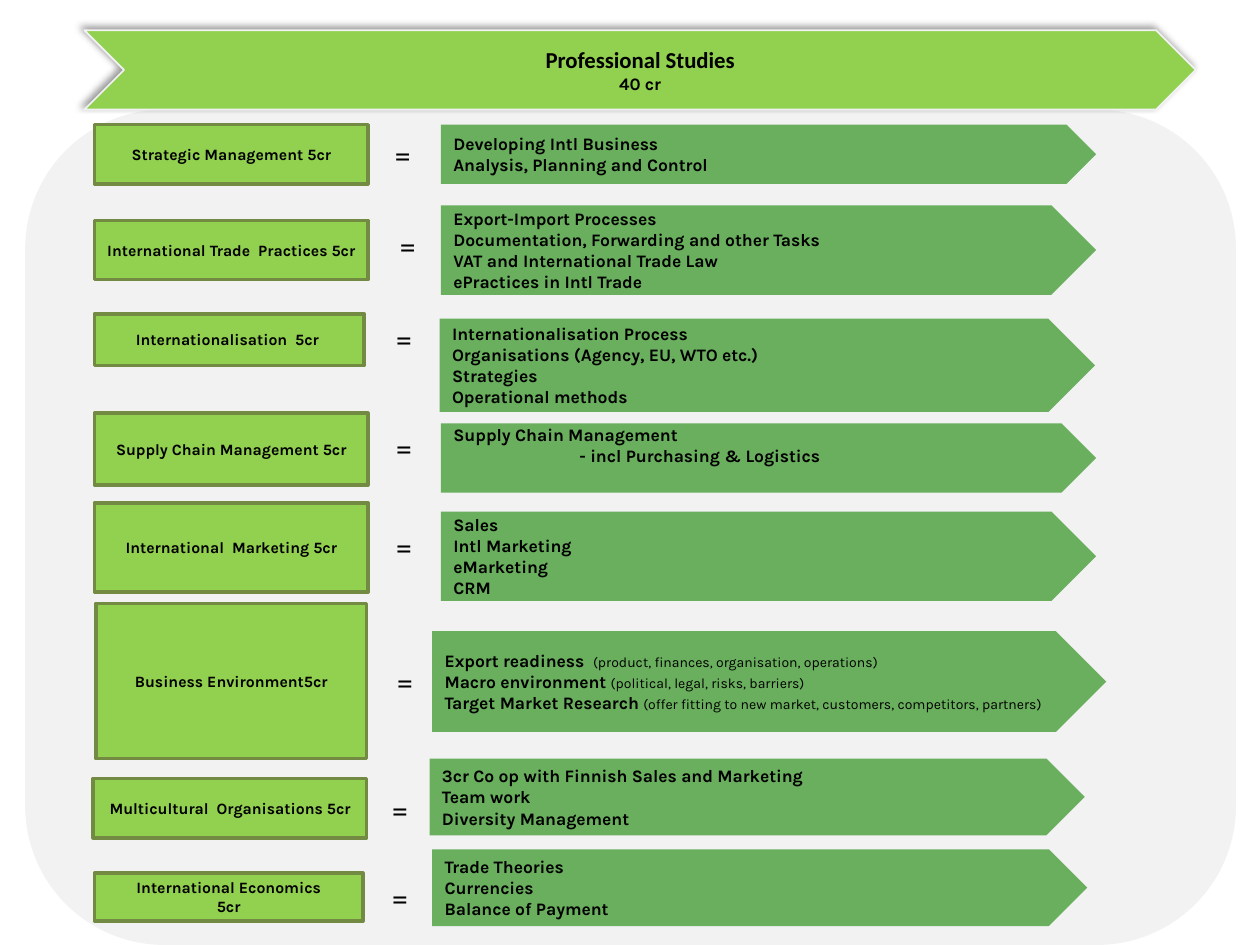
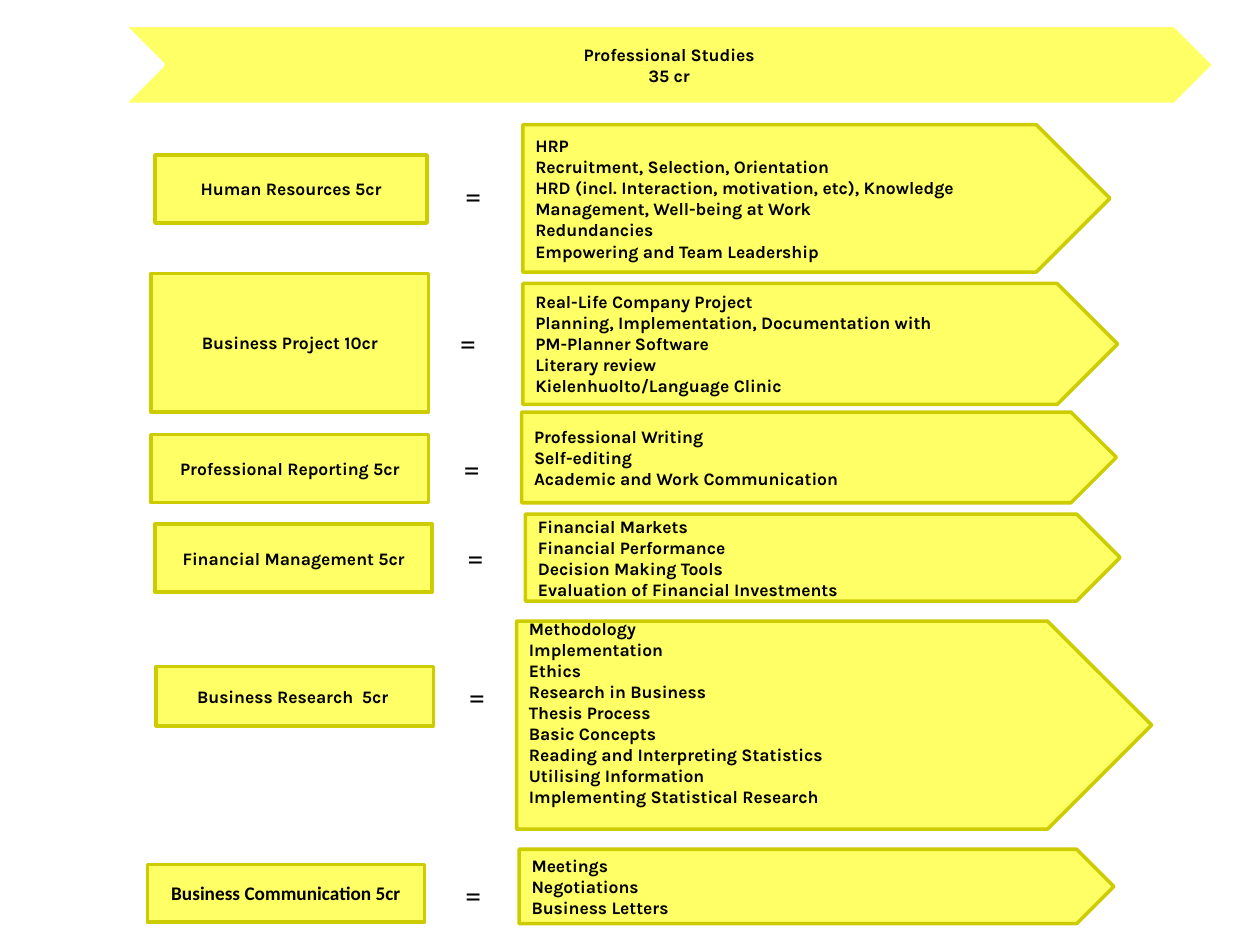
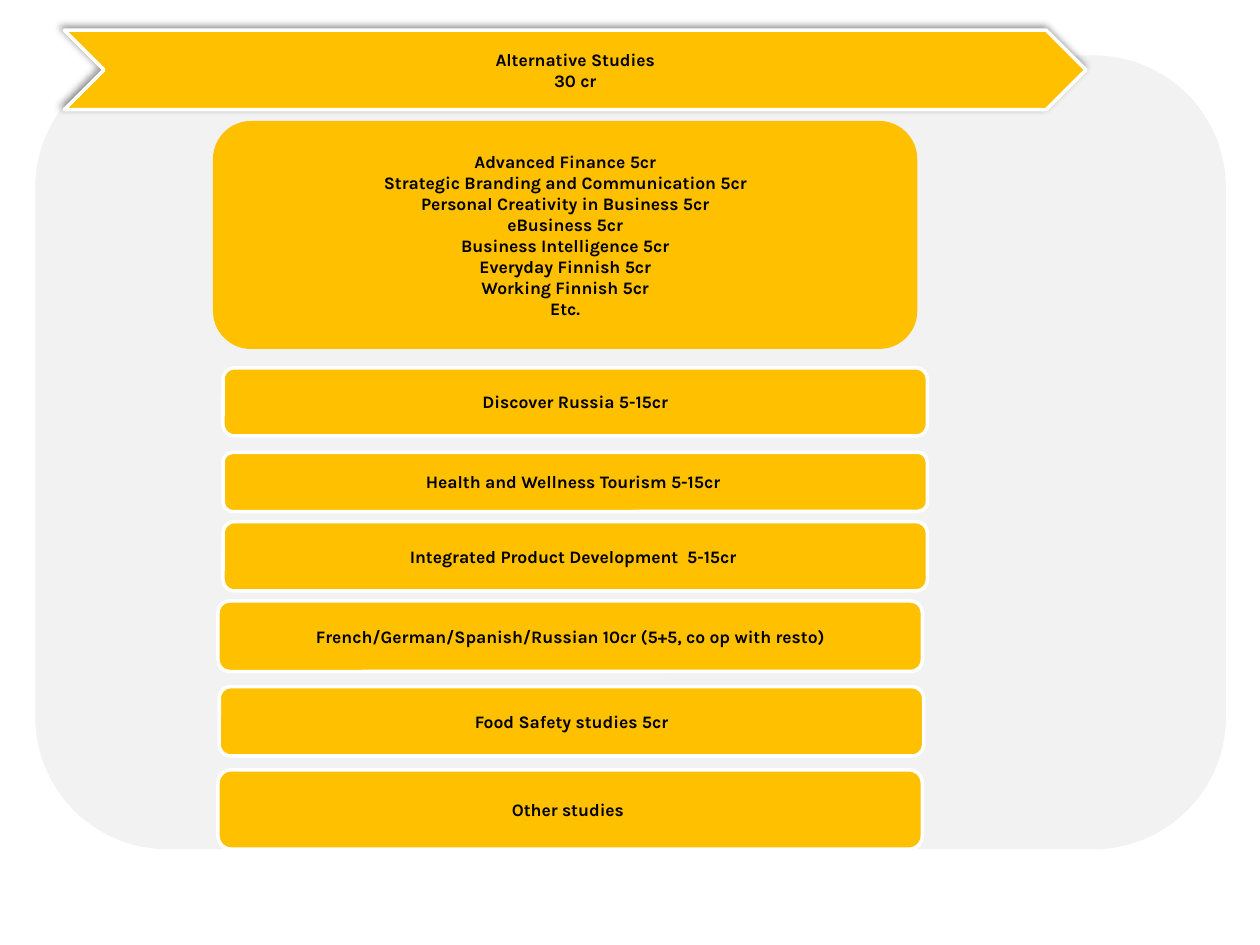
"""Build three slides that list study modules and their contents."""
import pptx
import pptx.dml.color
import pptx.enum.shapes
import pptx.enum.text
import pptx.oxml
import pptx.oxml.ns
import pptx.util

Inches = pptx.util.Inches
Pt = pptx.util.Pt
SHAPE = pptx.enum.shapes.MSO_SHAPE
ALIGN = pptx.enum.text.PP_ALIGN
ANCHOR = pptx.enum.text.MSO_ANCHOR

COLORS = {
    "text": "000000", "white": "FFFFFF", "panel": "F2F2F2",
    "lime": "92D050", "olive": "738A42", "green": "69AF5D",
    "yellow": "FFFF66", "mustard": "CCCC00", "amber": "FFC000",
}
BODY_FONT = "Karla"
SIGN_FONT = "Calibri"
SIGN_HEIGHT = 0.4
EMPTY_LINE = 0.2
QUOTE_INDENT = 1

# Each row: label lines, label box, sign position, arrow box, arrow lines
GREEN_ROWS = [
    (["Strategic Management 5cr"], (0.75, 0.99, 2.17, 0.47), (2.94, 1.03), (3.5, 0.99, 5.2, 0.47),
     ["Developing Intl Business", "Analysis, Planning and Control"]),
    (["International Trade  Practices 5cr"], (0.75, 1.75, 2.17, 0.47), (2.98, 1.75), (3.5, 1.63, 5.2, 0.71),
     ["Export-Import Processes", "Documentation, Forwarding and other Tasks",
      "VAT and International Trade Law", "ePractices in Intl Trade"]),
    (["Internationalisation  5cr "], (0.75, 2.49, 2.14, 0.41), (2.95, 2.49), (3.49, 2.53, 5.2, 0.74),
     ["Internationalisation Process", "Organisations (Agency, EU, WTO etc.)",
      "Strategies", "Operational methods"]),
    (["Supply Chain Management 5cr"], (0.75, 3.28, 2.17, 0.57), (2.95, 3.36), (3.5, 3.36, 5.2, 0.55),
     ["Supply Chain Management", "- incl Purchasing & Logistics"]),
    (["International  Marketing 5cr"], (0.75, 3.99, 2.17, 0.71), (2.95, 4.14), (3.5, 4.06, 5.2, 0.71),
     ["Sales", "Intl Marketing", "eMarketing", "CRM"]),
    (["Business Environment5cr"], (0.76, 4.79, 2.15, 1.23), (2.96, 5.21), (3.43, 5.01, 5.35, 0.8),
     [("Export readiness  ", "(product, finances, organisation, operations)"),
      ("Macro environment ", "(political, legal, risks, barriers)"),
      ("Target Market Research ", "(offer fitting to new market, customers, competitors, partners)")]),
    (["Multicultural  Organisations 5cr"], (0.74, 6.18, 2.17, 0.47), (2.92, 6.23), (3.41, 6.02, 5.2, 0.61),
     ["3cr Co op with Finnish Sales and Marketing", "Team work", "Diversity Management"]),
    (["International Economics", "5cr"], (0.75, 6.93, 2.13, 0.38), (2.92, 6.93), (3.43, 6.74, 5.2, 0.61),
     ["Trade Theories", "Currencies", "Balance of Payment"]),
]
YELLOW_ROWS = [
    (["Human Resources 5cr"], (1.23, 1.23, 2.16, 0.54), (3.44, 1.36), (4.15, 0.99, 4.66, 1.17),
     ["HRP", "Recruitment, Selection, Orientation",
      "HRD (incl. Interaction, motivation, etc), Knowledge Management, Well-being at Work",
      "Redundancies", "Empowering and Team Leadership"]),
    (["Business Project 10cr"], (1.2, 2.17, 2.2, 1.1), (3.4, 2.52), (4.15, 2.25, 4.72, 0.96),
     ["Real-Life Company Project", "Planning, Implementation, Documentation with",
      "PM-Planner Software", "Literary review", "Kielenhuolto/Language Clinic"]),
    (["Professional Reporting 5cr"], (1.2, 3.45, 2.2, 0.54), (3.43, 3.52), (4.14, 3.27, 4.72, 0.72),
     ["Professional Writing", "Self-editing", "Academic and Work Communication"]),
    (["Financial Management 5cr"], (1.23, 4.16, 2.2, 0.54), (3.46, 4.23), (4.17, 4.08, 4.72, 0.69),
     ["Financial Markets", "Financial Performance", "Decision Making Tools",
      "Evaluation of Financial Investments"]),
    (["Business Research  5cr "], (1.24, 5.29, 2.2, 0.47), (3.47, 5.33), (4.1, 4.93, 5.04, 1.65),
     ["Methodology", "Implementation", "Ethics", "Research in Business", "Thesis Process",
      "Basic Concepts", "Reading and Interpreting Statistics", "Utilising Information",
      "Implementing Statistical Research"]),
    (["Business Communication 5cr"], (1.17, 6.86, 2.2, 0.46), (3.44, 6.9), (4.12, 6.74, 4.72, 0.59),
     ["Meetings", "Negotiations", "Business Letters"]),
]
RAISED_ARROWS = {"Supply Chain Management", "Methodology"}
LABEL_STYLES = {"Business Communication 5cr": {"size": 11, "font": SIGN_FONT}}

ELECTIVES = ["Advanced Finance 5cr", "Strategic Branding and Communication 5cr",
             "Personal Creativity in Business 5cr", "eBusiness 5cr", "Business Intelligence 5cr",
             "Everyday Finnish 5cr", "Working Finnish 5cr", "Etc."]
ALTERNATIVES = [
    ("Discover Russia 5-15cr", 1.77, 2.92, 0.54),
    ("Health and Wellness Tourism 5-15cr ", 1.77, 3.59, 0.47),
    ("Integrated Product Development  5-15cr ", 1.77, 4.14, 0.55),
    ("French/German/Spanish/Russian 10cr (5+5, co op with resto)", 1.73, 4.77, 0.56),
    ("Food Safety studies 5cr", 1.74, 5.45, 0.55),
    ("Other studies ", 1.73, 6.11, 0.63),
]
BAR_WIDTH = 5.59


def rgb(name):
    return pptx.dml.color.RGBColor.from_string(COLORS[name])


def write(box, lines, size=10, font=BODY_FONT, bold=True, align=ALIGN.LEFT,
          anchor=ANCHOR.MIDDLE, first=None):
    """Fill a shape; a tuple is a bold part and a light part, first restyles line one."""
    frame = box.text_frame
    frame.word_wrap = True
    frame.vertical_anchor = anchor
    for index, line in enumerate(lines):
        para = frame.add_paragraph() if index else frame.paragraphs[0]
        para.alignment = align
        parts = line if isinstance(line, tuple) else (line,)
        if parts[0].startswith("- "):
            para._p.get_or_add_pPr().set("marL", str(Inches(QUOTE_INDENT)))
        style = {"size": size, "font": font}
        if first and index == 0:
            style = first
        for place, part in enumerate(parts):
            span = para.add_run()
            span.text = part
            span.font.name = style["font"]
            span.font.size = Pt(8 if place else style["size"])
            span.font.bold = bold and place == 0
            span.font.color.rgb = rgb("text")


def add_block(page, kind, at, fill, line=None, width=2):
    box = page.shapes.add_shape(kind, *map(Inches, at))
    box.shadow.inherit = False
    box.fill.solid()
    box.fill.fore_color.rgb = rgb(fill)
    if line:
        box.line.color.rgb = rgb(line)
        box.line.width = Pt(width)
    else:
        box.line.fill.background()
    return box


def add_shadow(box):
    effects = box._element.spPr.find(pptx.oxml.ns.qn("a:effectLst"))
    effects.append(pptx.oxml.parse_xml(
        f'<a:outerShdw {pptx.oxml.ns.nsdecls("a")} blurRad="{Pt(4)}" dist="{Pt(3)}" '
        'dir="13500000" algn="br" rotWithShape="0"><a:srgbClr val="000000">'
        '<a:alpha val="40000"/></a:srgbClr></a:outerShdw>'))


def add_banner(page, lines, at, fill, line, width, shadow=True, first=None):
    banner = add_block(page, SHAPE.CHEVRON, at, fill, line, width)
    if shadow:
        add_shadow(banner)
    write(banner, lines, align=ALIGN.CENTER, first=first)


def add_rows(page, rows, label_size, sign_width, label_colors, arrow_colors):
    for label, label_at, sign_at, arrow_at, topics in rows:
        box = add_block(page, SHAPE.FLOWCHART_PROCESS, label_at, *label_colors)
        style = LABEL_STYLES.get(label[0], {"size": label_size})
        write(box, label, align=ALIGN.CENTER, **style)

        sign = page.shapes.add_textbox(*map(Inches, (*sign_at, sign_width, SIGN_HEIGHT)))
        write(sign, ["="], size=18, font=SIGN_FONT, bold=False, align=ALIGN.CENTER,
              anchor=ANCHOR.TOP)
        sign.text_frame.auto_size = pptx.enum.text.MSO_AUTO_SIZE.SHAPE_TO_FIT_TEXT

        arrow = add_block(page, SHAPE.PENTAGON, arrow_at, *arrow_colors)
        write(arrow, topics)
        if topics[0] in RAISED_ARROWS:
            arrow.text_frame.margin_bottom += Inches(EMPTY_LINE)


def main():
    deck = pptx.Presentation()
    deck.slide_width, deck.slide_height = Inches(10), Inches(7.5)
    green, yellow, amber = (deck.slides.add_slide(deck.slide_layouts[6]) for _ in range(3))

    add_block(green, SHAPE.ROUNDED_RECTANGLE, (0.2, 0.87, 9.61, 6.63), "panel")
    add_banner(green, ["Professional Studies", "40 cr"], (0.67, 0.24, 8.82, 0.63),
               "lime", "panel", 1, first={"size": 13, "font": SIGN_FONT})
    add_rows(green, GREEN_ROWS, 9, 0.51, ("lime", "olive"), ("green",))

    add_banner(yellow, ["Professional Studies", "35 cr"], (0.98, 0.2, 8.66, 0.63),
               "yellow", "white", 2.25, shadow=False)
    add_rows(yellow, YELLOW_ROWS, 10, 0.63, ("yellow", "mustard"), ("yellow", "mustard"))

    add_block(amber, SHAPE.ROUNDED_RECTANGLE, (0.28, 0.44, 9.45, 6.3), "panel")
    add_banner(amber, ["Alternative Studies", "30 cr"], (0.51, 0.24, 8.11, 0.63),
               "amber", "white", 2)
    electives = add_block(amber, SHAPE.ROUNDED_RECTANGLE, (1.69, 0.96, BAR_WIDTH, 1.81), "amber")
    write(electives, ELECTIVES, align=ALIGN.CENTER)
    for title, left, top, height in ALTERNATIVES:
        bar = add_block(amber, SHAPE.ROUNDED_RECTANGLE, (left, top, BAR_WIDTH, height),
                        "amber", "white")
        write(bar, [title], align=ALIGN.CENTER)

    deck.save("out.pptx")


if __name__ == "__main__":
    main()
